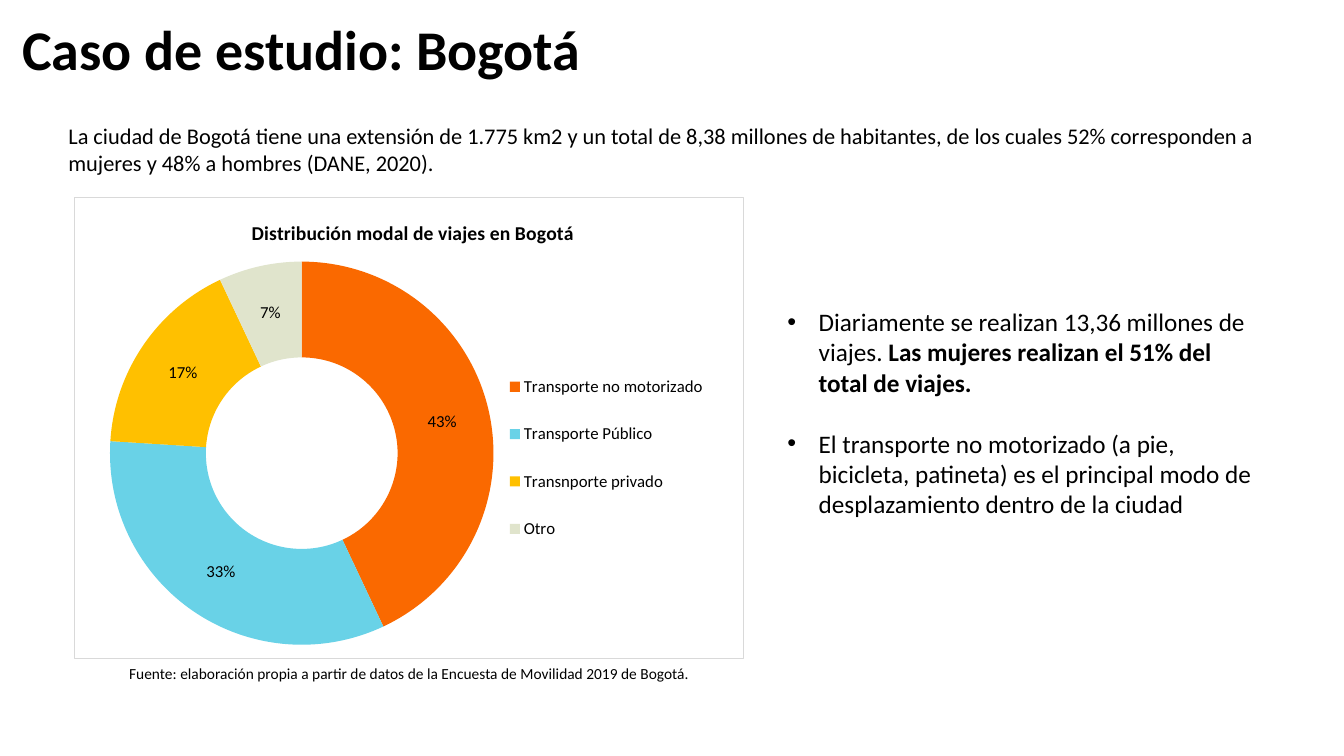
import pptx
import pptx.chart.data
import pptx.dml.color
import pptx.enum.chart
import pptx.enum.text
import pptx.oxml
import pptx.oxml.ns
import pptx.util

Inches, Pt = pptx.util.Inches, pptx.util.Pt
ALIGN = pptx.enum.text.PP_ALIGN
ANCHOR = pptx.enum.text.MSO_ANCHOR

# Content
TITLE = "Caso de estudio: Bogotá"
INTRO = ("La ciudad de Bogotá tiene una extensión de 1.775 km2 y un total de 8,38 millones "
         "de habitantes, de los cuales 52% corresponden a mujeres y 48% a hombres (DANE, 2020).")
SOURCE = "Fuente: elaboración propia a partir de datos de la Encuesta de Movilidad 2019 de Bogotá."
HEAD = "Distribución modal de viajes en Bogotá"
MODES = [
    ("Transporte no motorizado", 0.43, "FA6900"),
    ("Transporte Público", 0.33, "69D2E7"),
    ("Transnporte privado", 0.17, "FFC000"),
    ("Otro", 0.07, "E0E4CC"),
]
POINTS = [
    [("Diariamente se realizan 13,36 millones de viajes. ", False),
     ("Las mujeres realizan el 51% del total de viajes.", True)],
    [("El transporte no motorizado (a pie, bicicleta, patineta) es el principal modo "
      "de desplazamiento dentro de la ciudad", False)],
]


def paint(hue):
    return pptx.dml.color.RGBColor.from_string(hue)


def style(font, size, bold=False):
    for key, val in {"name": "Calibri", "size": Pt(size), "bold": bold}.items():
        setattr(font, key, val)
    font.color.rgb = paint("000000")


def place(shape, box):
    for key, val in zip(("left", "top", "width", "height"), box):
        setattr(shape, key, Inches(val))


def write(frame, text, size, align=ALIGN.LEFT, bold=False):
    frame.word_wrap = True
    para = frame.paragraphs[0]
    para.alignment = align
    run = para.add_run()
    run.text = text
    style(run.font, size, bold)
    return para


def make(tag, inner="", attrs=""):
    names = pptx.oxml.ns.nsdecls("a", "c")
    return pptx.oxml.parse_xml(f"<{tag} {names} {attrs}>{inner}</{tag}>")


def lay(node, spot, inner=False, **sides):
    """Give a chart part a fixed place, in fractions of the chart."""
    for old in node.findall(pptx.oxml.ns.qn("c:layout")):
        node.remove(old)
    body = '<c:layoutTarget val="inner"/>' if inner else ""
    body += '<c:xMode val="edge"/><c:yMode val="edge"/>'
    body += "".join(f'<c:{key} val="{val}"/>' for key, val in sides.items())
    node.insert(spot, make("c:layout", f"<c:manualLayout>{body}</c:manualLayout>"))


deck = pptx.Presentation()
deck.slide_width, deck.slide_height = Inches(13.33), Inches(7.5)
slide = deck.slides.add_slide(deck.slide_layouts[1])
title, body = slide.placeholders

# Title
place(title, (0.12, 0.01, 11.5, 1.01))
title.text_frame.vertical_anchor = ANCHOR.MIDDLE
write(title.text_frame, TITLE, 40, bold=True).line_spacing = 0.9

# Intro and source
for text, box, size, align in [
    (INTRO, (0.58, 1.16, 12.18, 0.64), 16, ALIGN.LEFT),
    (SOURCE, (-0.03, 6.54, 8.18, 0.29), 11, ALIGN.CENTER),
]:
    note = slide.shapes.add_textbox(*map(Inches, box))
    write(note.text_frame, text, size, align)

# Doughnut chart
data = pptx.chart.data.CategoryChartData(number_format="0%")
data.categories = [mode[0] for mode in MODES]
data.add_series("Series 1", [mode[1] for mode in MODES])
chart = slide.shapes.add_chart(
    pptx.enum.chart.XL_CHART_TYPE.DOUGHNUT,
    *map(Inches, (0.73, 1.95, 6.65, 4.59)), data).chart
style(chart.font, 12)
chart.has_title = True
write(chart.chart_title.text_frame, HEAD, 14, ALIGN.CENTER, True)
chart.has_legend = True
legend = chart.legend
legend.position = pptx.enum.chart.XL_LEGEND_POSITION.RIGHT
legend.include_in_layout = False
style(legend.font, 12)

plot = chart.plots[0]
plot.vary_by_categories = True
plot.has_data_labels = True
labels = plot.data_labels
for key, val in {"show_value": True, "show_percentage": False, "number_format": "0%",
                 "number_format_is_linked": False}.items():
    setattr(labels, key, val)
style(labels.font, 12)
for k, mode in enumerate(MODES):
    fill = plot.series[0].points[k].format.fill
    fill.solid()
    fill.fore_color.rgb = paint(mode[2])

# Chart hole, frame and layout
root = chart.element
hole, core, area, key, head = (
    root.find(".//" + pptx.oxml.ns.qn(tag))
    for tag in ("c:holeSize", "c:chart", "c:plotArea", "c:legend", "c:title"))
hole.set("val", "60")
core.addnext(make(
    "c:spPr", '<a:solidFill><a:srgbClr val="FFFFFF"/></a:solidFill><a:ln w="9525">'
    '<a:solidFill><a:srgbClr val="D9D9D9"/></a:solidFill></a:ln>'))
lay(area, 0, True, x=0.05, y=0.14, w=0.58, h=0.83)
lay(key, 1, x=0.63, y=0.33, w=0.33, h=0.47)
lay(head, 1, x=0.26, y=0.04)

# Bullets
place(body, (7.71, 2.99, 4.89, 2.22))
body.text_frame.word_wrap = True
for k, parts in enumerate(POINTS):
    para = body.text_frame.paragraphs[0] if k == 0 else body.text_frame.add_paragraph()
    props = para._p.get_or_add_pPr()
    props.set("marL", str(Inches(0.31)))
    props.set("indent", str(-Inches(0.31)))
    props.append(make("a:buFont", attrs='typeface="Arial"'))
    props.append(make("a:buChar", attrs='char="•"'))
    para.space_before = Pt(22 * k)
    for text, bold in parts:
        run = para.add_run()
        run.text = text
        style(run.font, 18, bold)

deck.save("out.pptx")
